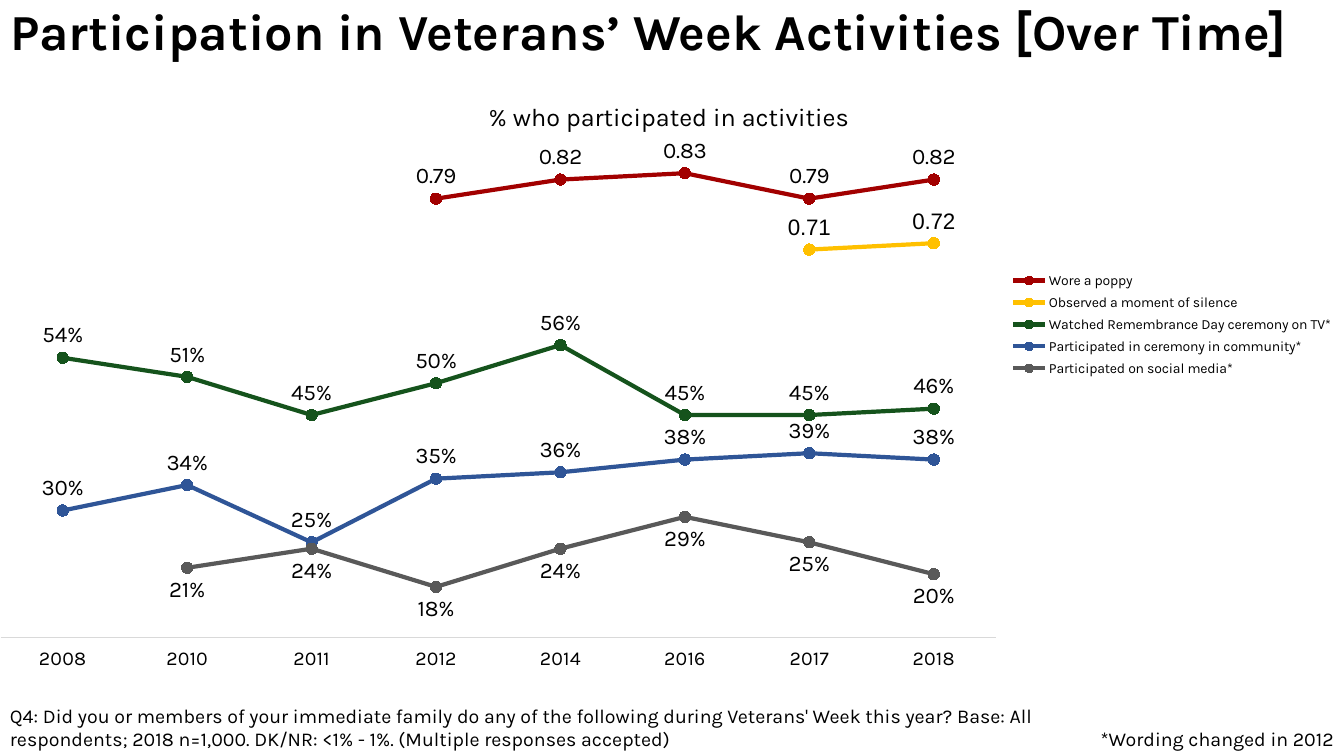
"""Build the slide on participation in Veterans' Week activities over time."""
from dataclasses import dataclass

from lxml.etree import SubElement
from pptx import Presentation
from pptx.chart.data import CategoryChartData
from pptx.dml.color import RGBColor
from pptx.enum.chart import (XL_CHART_TYPE, XL_LABEL_POSITION, XL_LEGEND_POSITION,
                             XL_MARKER_STYLE, XL_TICK_LABEL_POSITION, XL_TICK_MARK)
from pptx.enum.text import MSO_ANCHOR, MSO_AUTO_SIZE, PP_ALIGN
from pptx.oxml.ns import qn
from pptx.util import Pt

HEADING = "Participation in Veterans’ Week Activities [Over Time]"
CHART_HEADING = "% who participated in activities"
QUESTION = ("Q4: Did you or members of your immediate family do any of the following "
            "during Veterans' Week this year? Base: All respondents; 2018 n=1,000. "
            "DK/NR: <1% - 1%. (Multiple responses accepted)")
WORDING_NOTE = "*Wording changed in 2012"
YEARS = ("2008", "2010", "2011", "2012", "2014", "2016", "2017", "2018")
ABOVE, BELOW = XL_LABEL_POSITION.ABOVE, XL_LABEL_POSITION.BELOW
ACTIVITIES = [
    ("Wore a poppy", (None, None, None, 0.79, 0.82, 0.83, 0.79, 0.82),
     "A20000", "General", ABOVE, "Karla"),
    ("Observed a moment of silence", (None, None, None, None, None, None, 0.71, 0.72),
     "FFC000", "General", ABOVE, "Arial"),
    ("Watched Remembrance Day ceremony on TV*",
     (0.54, 0.51, 0.45, 0.5, 0.56, 0.45, 0.45, 0.46), "15531C", "0%", ABOVE, "Karla"),
    ("Participated in ceremony in community*",
     (0.3, 0.34, 0.25, 0.35, 0.36, 0.38, 0.39, 0.38), "2F5597", "0%", ABOVE, "Karla"),
    ("Participated on social media*",
     (None, 0.21, 0.24, 0.18, 0.24, 0.29, 0.25, 0.2), "595959", "0%", BELOW, "Karla"),
]


@dataclass(frozen=True)
class Theme:
    """Colours, fonts and type sizes of the slide."""
    font: str = "Karla"
    ink: str = "000000"
    paper: str = "FFFFFF"
    rule: str = "D9D9D9"
    heading: int = 36
    chart_heading: int = 18
    label: int = 16
    body: int = 14
    legend: int = 10


THEME = Theme()
WIDTH, HEIGHT = 960, 540
CHART_TOP, CHART_HEIGHT = 51, 435.6


def colour(code):
    """Turn a hex code into a colour."""
    return RGBColor.from_string(code)


def style(font, size, face=THEME.font, bold=False):
    """Set the face, size and colour of a font."""
    font.name, font.size, font.bold = face, Pt(size), bold
    font.color.rgb = colour(THEME.ink)


def write(frame, text, size=THEME.body, bold=False, align=PP_ALIGN.LEFT, spacing=1.0):
    """Put one formatted paragraph into a text frame."""
    paragraph = frame.paragraphs[0]
    paragraph.alignment, paragraph.line_spacing = align, spacing
    run = paragraph.add_run()
    run.text = text
    style(run.font, size, bold=bold)


def add_note(slide, text, box, **look):
    """Add a wrapped text box."""
    frame = slide.shapes.add_textbox(*map(Pt, box)).text_frame
    frame.word_wrap = True
    write(frame, text, **look)


def place(part, index, **fractions):
    """Fix a chart part at fractions of the chart area."""
    for old in part.findall(qn("c:layout")):
        part.remove(old)
    layout = SubElement(part, qn("c:layout"))
    part.insert(index, layout)
    manual = SubElement(layout, qn("c:manualLayout"))
    if part.tag == qn("c:plotArea"):
        SubElement(manual, qn("c:layoutTarget")).set("val", "inner")
    for mode in ("xMode", "yMode"):
        SubElement(manual, qn(f"c:{mode}")).set("val", "edge")
    for key, fraction in fractions.items():
        SubElement(manual, qn(f"c:{key}")).set("val", str(fraction))


def add_heading(slide):
    """Fill and place the title."""
    title = slide.shapes.title
    title.left, title.top, title.width, title.height = map(Pt, (0, -1.5, WIDTH, 52.5))
    title.fill.solid()
    title.fill.fore_color.rgb = colour(THEME.paper)
    frame = title.text_frame
    frame.auto_size, frame.vertical_anchor = MSO_AUTO_SIZE.NONE, MSO_ANCHOR.MIDDLE
    write(frame, HEADING, size=THEME.heading, bold=True, spacing=0.9)


def format_activity(series, hue, number_format, position, face):
    """Colour one line with its markers and labels."""
    series.smooth = False
    series.format.line.width = Pt(3)
    series.format.line.color.rgb = colour(hue)
    marker = series.marker
    marker.style, marker.size = XL_MARKER_STYLE.CIRCLE, 8
    marker.format.fill.solid()
    marker.format.fill.fore_color.rgb = colour(hue)
    marker.format.line.color.rgb = colour(hue)
    labels = series.data_labels
    labels.show_value, labels.position = True, position
    labels.number_format, labels.number_format_is_linked = number_format, False
    style(labels.font, THEME.label, face)


def add_trends(slide):
    """Add the line chart of all activities."""
    trends = CategoryChartData()
    trends.categories = YEARS
    for name, shares, *_ in ACTIVITIES:
        trends.add_series(name, shares)
    chart = slide.shapes.add_chart(
        XL_CHART_TYPE.LINE_MARKERS, Pt(0), Pt(CHART_TOP), Pt(WIDTH), Pt(CHART_HEIGHT),
        trends).chart
    style(chart.font, THEME.legend)
    chart.plots[0].vary_by_categories = False
    for series, (_, _, *look) in zip(chart.plots[0].series, ACTIVITIES):
        format_activity(series, *look)

    shares_axis = chart.value_axis
    shares_axis.minimum_scale, shares_axis.maximum_scale = 0.1, 0.9
    shares_axis.has_major_gridlines = shares_axis.visible = False
    years_axis = chart.category_axis
    years_axis.major_tick_mark = years_axis.minor_tick_mark = XL_TICK_MARK.NONE
    years_axis.tick_label_position = XL_TICK_LABEL_POSITION.LOW
    years_axis.format.line.width = Pt(0.75)
    years_axis.format.line.color.rgb = colour(THEME.rule)
    style(years_axis.tick_labels.font, THEME.body)

    chart.has_title = chart.has_legend = True
    write(chart.chart_title.text_frame, CHART_HEADING, size=THEME.chart_heading,
          align=PP_ALIGN.CENTER)
    legend = chart.legend
    legend.position, legend.include_in_layout = XL_LEGEND_POSITION.RIGHT, False
    style(legend.font, THEME.legend)
    plot_area = next(chart.element.iter(qn("c:plotArea")))
    legend_part = next(chart.element.iter(qn("c:legend")))
    title_part = next(chart.element.iter(qn("c:title")))
    place(plot_area, 0, x=0, y=0.094, w=0.741, h=0.835)
    place(legend_part, 1, x=0.747, y=0.32, w=0.25, h=0.19)
    place(title_part, 1, x=0.36, y=0.04)


def main():
    """Assemble and save the slide."""
    deck = Presentation()
    deck.slide_width, deck.slide_height = Pt(WIDTH), Pt(HEIGHT)
    slide = deck.slides.add_slide(deck.slide_layouts[5])
    add_heading(slide)
    add_note(slide, QUESTION, (0, 499, 779, 41))
    add_trends(slide)
    add_note(slide, WORDING_NOTE, (770, 516, 190, 24), align=PP_ALIGN.RIGHT)
    deck.save("out.pptx")


if __name__ == "__main__":
    main()
